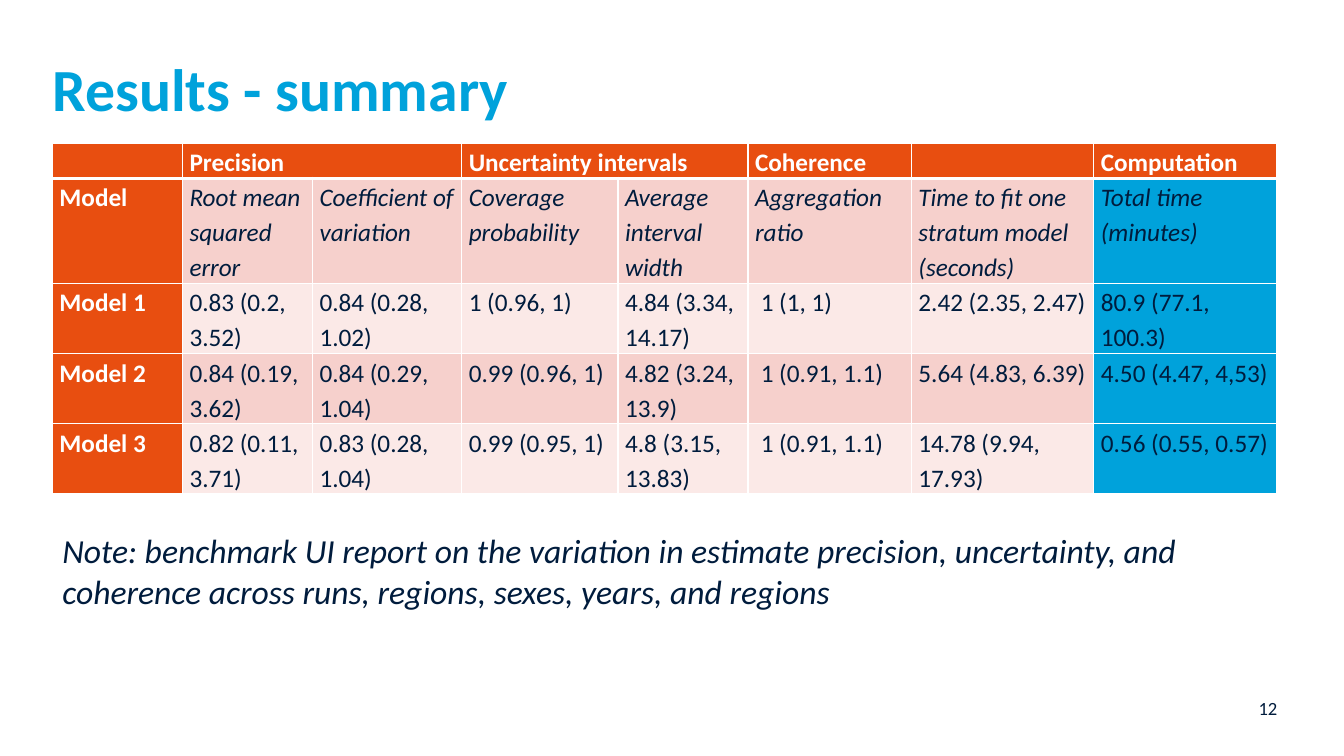
"""Build the results summary slide with its model comparison table."""
import lxml.etree
import pptx
import pptx.dml.color
import pptx.enum.text
import pptx.oxml.ns
import pptx.util

Inches = pptx.util.Inches
RGBColor = pptx.dml.color.RGBColor
Align = pptx.enum.text.PP_ALIGN
Anchor = pptx.enum.text.MSO_ANCHOR

BLUE = RGBColor(0x00, 0xA2, 0xDB)
NAVY = RGBColor(0x00, 0x1C, 0x3D)
ORANGE = RGBColor(0xE8, 0x4E, 0x10)
ROSE = RGBColor(0xF6, 0xD0, 0xCC)
PALE_ROSE = RGBColor(0xFB, 0xE9, 0xE7)
WHITE = RGBColor(0xFF, 0xFF, 0xFF)
FONT = "Calibri"

LEFT = 0.52
COLUMN_WIDTHS = [1.29, 1.29, 1.48, 1.55, 1.29, 1.62, 1.81, 1.81]
ROW_HEIGHTS = [0.35, 1.04, 0.69, 0.69, 0.69]
MERGED_HEADERS = [(1, 2), (3, 4)]
RESULTS = [
    ["", "Precision", "", "Uncertainty intervals", "", "Coherence", "", "Computation"],
    ["Model", "Root mean squared error", "Coefficient of variation",
     "Coverage probability", "Average interval width", "Aggregation ratio",
     "Time to fit one stratum model (seconds)", "Total time (minutes)"],
    ["Model 1", "0.83 (0.2, 3.52)", "0.84 (0.28, 1.02)", "1 (0.96, 1)",
     "4.84 (3.34, 14.17)", " 1 (1, 1)", "2.42 (2.35, 2.47)", "80.9 (77.1, 100.3)"],
    ["Model 2", "0.84 (0.19, 3.62)", "0.84 (0.29, 1.04)", "0.99 (0.96, 1)",
     "4.82 (3.24, 13.9)", " 1 (0.91, 1.1)", "5.64 (4.83, 6.39)", "4.50 (4.47, 4,53)"],
    ["Model 3", "0.82 (0.11, 3.71)", "0.83 (0.28, 1.04)", "0.99 (0.95, 1)",
     "4.8 (3.15, 13.83)", " 1 (0.91, 1.1)", "14.78 (9.94, 17.93)", "0.56 (0.55, 0.57)"],
]
NOTE = ("Note: benchmark UI report on the variation in estimate precision, uncertainty, "
        "and coherence across runs, regions, sexes, years, and regions")


def write_text(frame, text, size=18, color=NAVY, bold=False, italic=False,
               align=Align.LEFT, line_spacing=None, space_after=None):
    """Write one formatted paragraph into a text frame."""
    para = frame.paragraphs[0]
    para.alignment = align
    if line_spacing:
        para.line_spacing = line_spacing
    if space_after:
        para.space_after = pptx.util.Pt(space_after)
    if text:
        span = para.add_run()
        span.text = text
        span.font.name = FONT
        span.font.size = pptx.util.Pt(size)
        span.font.color.rgb = color
        span.font.bold = bold
        span.font.italic = italic


def clear_margins(frame):
    """Remove the inner margins of a text frame."""
    frame.margin_left = frame.margin_right = 0
    frame.margin_top = frame.margin_bottom = 0


def add_title(slide, text):
    """Place and fill the title placeholder."""
    title = slide.shapes.title
    title.left, title.top = Inches(LEFT), Inches(0.45)
    title.width, title.height = Inches(12.14), Inches(0.83)
    frame = title.text_frame
    clear_margins(frame)
    frame.auto_size = pptx.enum.text.MSO_AUTO_SIZE.NONE
    frame.vertical_anchor = Anchor.MIDDLE
    write_text(frame, text, size=42.7, color=BLUE, bold=True)


def add_text_box(slide, left, top, width, height, text, margins=True, **text_format):
    """Add a wrapping text box."""
    box = slide.shapes.add_textbox(Inches(left), Inches(top), Inches(width), Inches(height))
    frame = box.text_frame
    frame.word_wrap = True
    if not margins:
        clear_margins(frame)
    write_text(frame, text, **text_format)


def set_borders(cell, top, bottom):
    """Draw white cell borders, one point wide at the sides."""
    properties = cell._tc.get_or_add_tcPr()
    for side, points in (("L", 1), ("R", 1), ("T", top), ("B", bottom)):
        line = lxml.etree.SubElement(properties, pptx.oxml.ns.qn(f"a:ln{side}"),
                                     w=str(pptx.util.Pt(points)))
        fill = lxml.etree.SubElement(line, pptx.oxml.ns.qn("a:solidFill"))
        lxml.etree.SubElement(fill, pptx.oxml.ns.qn("a:srgbClr"), val=str(WHITE))


def cell_fill(row, column):
    """Choose a cell's fill from its place in the table."""
    if row == 0 or column == 0:
        return ORANGE
    if column == len(COLUMN_WIDTHS) - 1:
        return BLUE
    return ROSE if row % 2 else PALE_ROSE


def format_cell(cell, row, column, text):
    """Fill, border and write one table cell."""
    heading = row == 0 or column == 0
    set_borders(cell, top=3 if row == 1 else 1, bottom=3 if row == 0 else 1)
    cell.fill.solid()
    cell.fill.fore_color.rgb = cell_fill(row, column)
    cell.margin_left = cell.margin_right = Inches(0.07)
    cell.margin_top = cell.margin_bottom = 0
    write_text(cell.text_frame, text, color=WHITE if heading else NAVY, bold=heading,
               italic=row == 1 and not heading, line_spacing=1.14, space_after=6)


def add_results_table(slide):
    """Add the table that compares the models."""
    table = slide.shapes.add_table(
        len(ROW_HEIGHTS), len(COLUMN_WIDTHS), Inches(LEFT), Inches(1.42),
        Inches(sum(COLUMN_WIDTHS)), Inches(sum(ROW_HEIGHTS))).table
    for column, width in zip(table.columns, COLUMN_WIDTHS):
        column.width = Inches(width)
    for row, height in zip(table.rows, ROW_HEIGHTS):
        row.height = Inches(height)
    for row, texts in enumerate(RESULTS):
        for column, text in enumerate(texts):
            format_cell(table.cell(row, column), row, column, text)
    for first, last in MERGED_HEADERS:
        table.cell(0, first).merge(table.cell(0, last))


def main():
    """Build and save the deck."""
    deck = pptx.Presentation()
    deck.slide_width, deck.slide_height = Inches(13.33), Inches(7.5)
    slide = deck.slides.add_slide(deck.slide_layouts.get_by_name("Title Only"))
    add_title(slide, "Results - summary")
    add_results_table(slide)
    add_text_box(slide, 12.13, 6.91, 0.54, 0.4, "12", margins=False,
                 size=13.3, align=Align.RIGHT)
    add_text_box(slide, LEFT, 5.21, 12.17, 0.91, NOTE, size=24, italic=True)
    deck.save("out.pptx")


if __name__ == "__main__":
    main()
